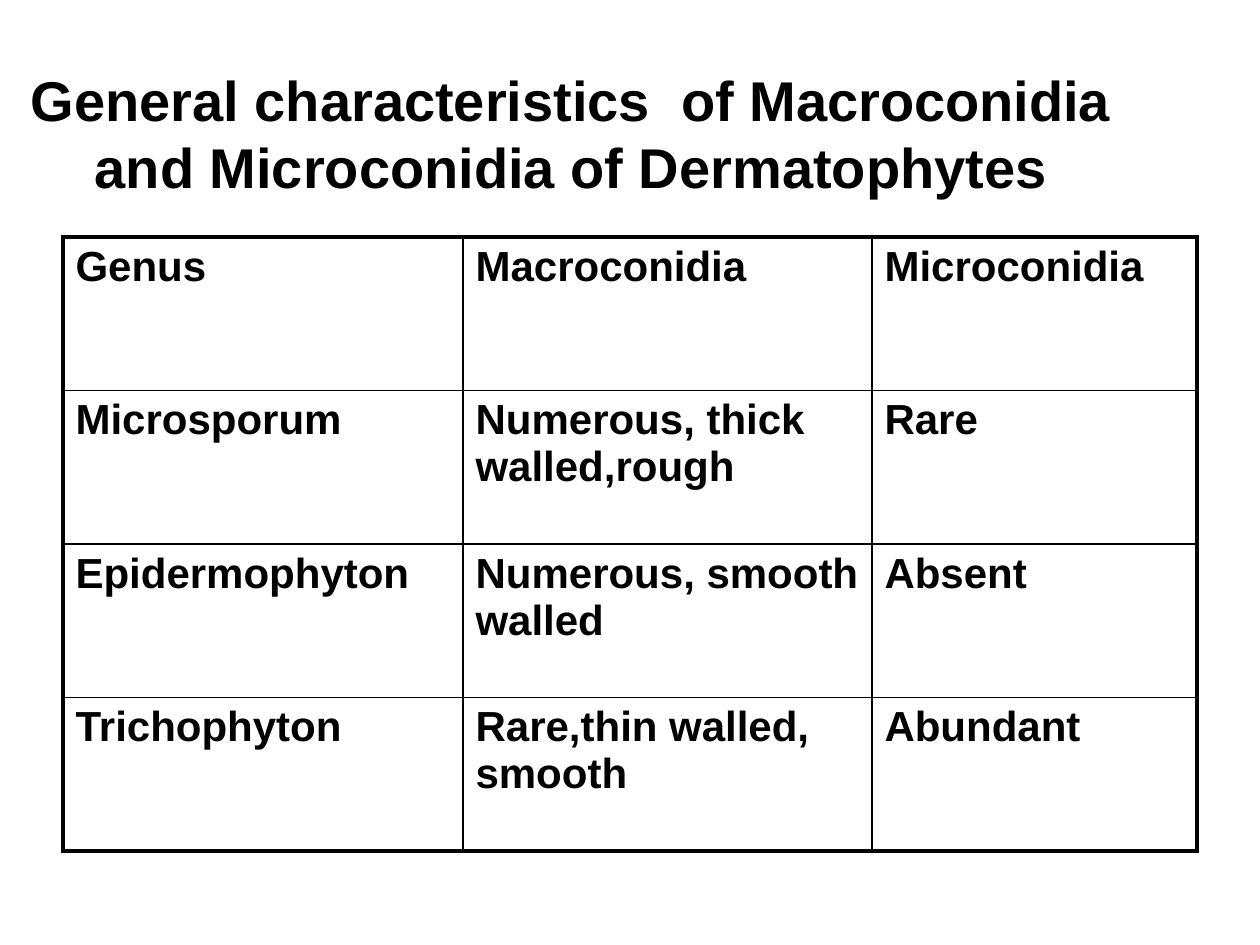
from lxml.etree import SubElement
from pptx import Presentation
from pptx.dml.color import RGBColor
from pptx.enum.text import MSO_ANCHOR, MSO_AUTO_SIZE, PP_ALIGN
from pptx.oxml.ns import qn
from pptx.util import Emu, Pt

COLORS = {"text": "000000", "rule": "000000"}
TITLE = "General characteristics  of Macroconidia and Microconidia of Dermatophytes"
GENERA = [
    ["Genus", "Macroconidia", "Microconidia"],
    ["Microsporum", "Numerous, thick walled,rough", "Rare"],
    ["Epidermophyton", "Numerous, smooth walled", "Absent"],
    ["Trichophyton", "Rare,thin walled, smooth", "Abundant"],
]
COLUMN_WIDTHS = [400, 409, 325]
INNER_RULE, OUTER_RULE = 1, 2.25


def px(length):
    return Emu(round(length * 914400 / 126))


def write_text(frame, text, size=24, bold=True, color="text", font="Arial",
               align=PP_ALIGN.LEFT, anchor=MSO_ANCHOR.TOP):
    frame.text = text
    frame.word_wrap = True
    frame.vertical_anchor = anchor
    paragraph = frame.paragraphs[0]
    paragraph.alignment = align
    style = paragraph.runs[0].font
    style.name, style.size, style.bold = font, Pt(size), bold
    style.color.rgb = RGBColor.from_string(COLORS[color])


def rule_cell(cell, widths):
    """Draw the cell's borders; widths maps L, R, T, B, in that order, to points."""
    properties = cell._tc.get_or_add_tcPr()
    for side, width in widths.items():
        line = SubElement(properties, qn(f"a:ln{side}"), w=str(Pt(width)))
        fill = SubElement(line, qn("a:solidFill"))
        SubElement(fill, qn("a:srgbClr"), val=COLORS["rule"])


def add_title(slide):
    title = slide.shapes.title
    title.left, title.top, title.width, title.height = map(px, (-29, 59, 1201, 147))
    title.text_frame.auto_size = MSO_AUTO_SIZE.NONE
    write_text(title.text_frame, TITLE, size=32, align=PP_ALIGN.CENTER,
               anchor=MSO_ANCHOR.MIDDLE)


def add_genus_table(slide):
    last_row, last_column = len(GENERA) - 1, len(COLUMN_WIDTHS) - 1
    table = slide.shapes.add_table(
        len(GENERA), len(COLUMN_WIDTHS),
        px(63), px(237), px(sum(COLUMN_WIDTHS)), px(614)).table
    table.first_row = table.horz_banding = False
    for column, width in zip(table.columns, COLUMN_WIDTHS):
        column.width = px(width)
    for r, entries in enumerate(GENERA):
        for c, entry in enumerate(entries):
            cell = table.cell(r, c)
            write_text(cell.text_frame, entry)
            outer = {"L": c == 0, "R": c == last_column,
                     "T": r == 0, "B": r == last_row}
            rule_cell(cell, {side: OUTER_RULE if edge else INNER_RULE
                             for side, edge in outer.items()})
            cell.fill.background()


def main():
    deck = Presentation()
    deck.slide_width, deck.slide_height = px(1260), px(945)
    slide = deck.slides.add_slide(deck.slide_layouts.get_by_name("Title Only"))
    add_title(slide)
    add_genus_table(slide)
    deck.save("out.pptx")


if __name__ == "__main__":
    main()
